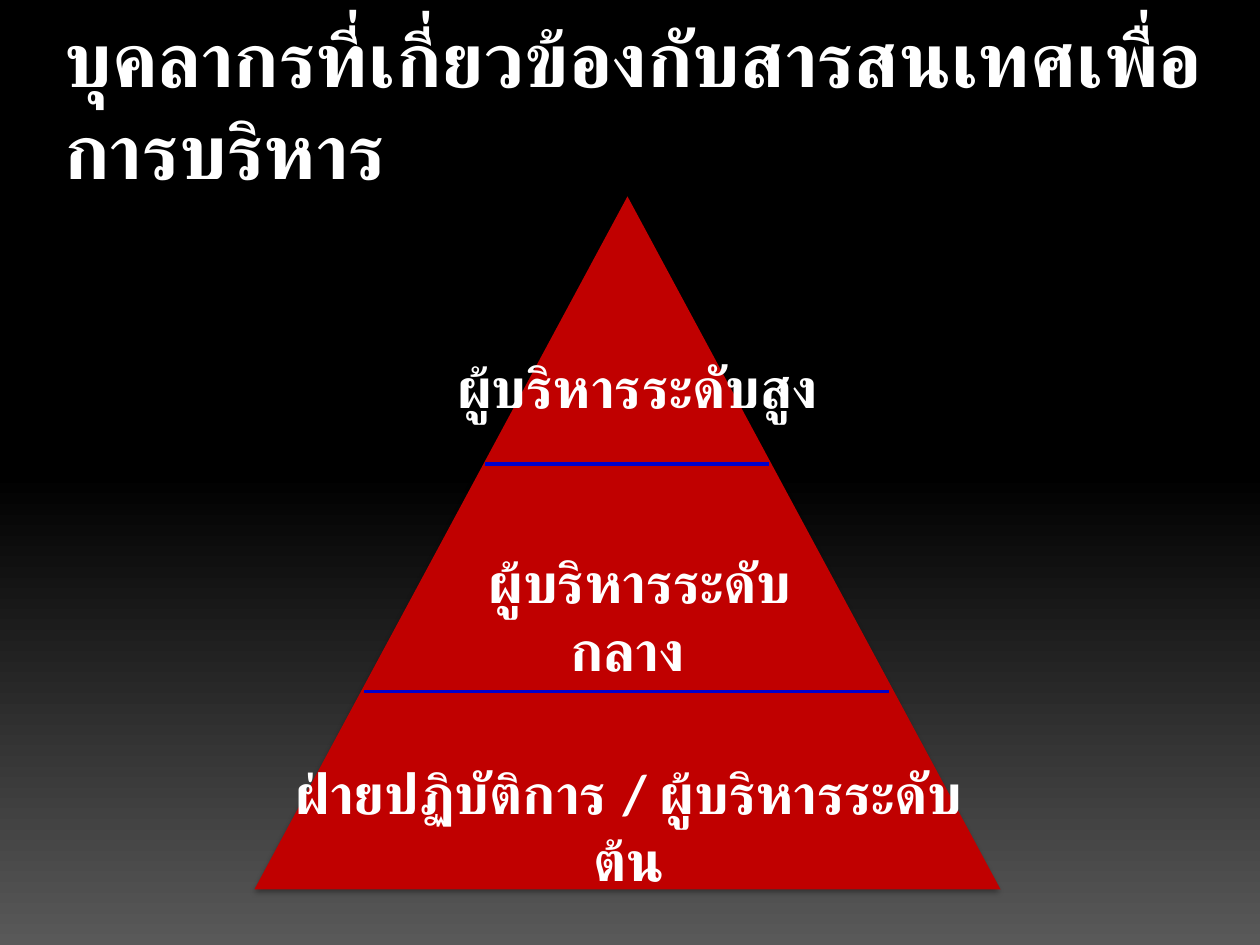
from dataclasses import dataclass

from lxml import etree
from pptx import Presentation
from pptx.dml.color import RGBColor
from pptx.enum.shapes import MSO_CONNECTOR, MSO_SHAPE
from pptx.enum.text import MSO_ANCHOR, MSO_AUTO_SIZE, PP_ALIGN
from pptx.oxml import parse_xml
from pptx.oxml.ns import nsdecls, qn
from pptx.util import Cm, Pt

TRIANGLE = MSO_SHAPE.ISOSCELES_TRIANGLE
STRAIGHT = MSO_CONNECTOR.STRAIGHT
LEFT, CENTER = PP_ALIGN.LEFT, PP_ALIGN.CENTER
MIDDLE = MSO_ANCHOR.MIDDLE
FIXED, GROW = MSO_AUTO_SIZE.NONE, MSO_AUTO_SIZE.SHAPE_TO_FIT_TEXT

SHADOW = f"""<a:effectLst {nsdecls('a')}>
  <a:outerShdw blurRad="39370" dist="22860" dir="5400000" rotWithShape="0">
    <a:srgbClr val="000000"><a:alpha val="35000"/></a:srgbClr>
  </a:outerShdw>
</a:effectLst>"""


@dataclass(frozen=True)
class Theme:
    font: str = "Calibri"
    title: int = 44
    label: int = 32
    rule: float = 2.25
    text: RGBColor = RGBColor(255, 255, 255)
    dark: RGBColor = RGBColor(0, 0, 0)
    grey: RGBColor = RGBColor(0x59, 0x59, 0x59)
    red: RGBColor = RGBColor(0xC0, 0, 0)
    blue: RGBColor = RGBColor(0, 0, 0xCC)


class Page:
    """Holds the theme and the current slide; lengths are in cm."""

    def __init__(self, slide, theme):
        self.slide = slide
        self.theme = theme

    def backdrop(self):
        fill = self.slide.background.fill
        fill.gradient()
        fill.gradient_angle = 270
        stops = ((0.5, self.theme.dark), (1, self.theme.grey))
        for stop, (place, color) in zip(fill.gradient_stops, stops):
            stop.position = place
            stop.color.rgb = color

    def set_text(self, shape, text, size, align, fit):
        frame = shape.text_frame
        frame.word_wrap = True
        frame.auto_size = fit
        para = frame.paragraphs[0]
        para.text = text
        para.alignment = align
        font = para.font
        font.name, font.size, font.bold = self.theme.font, Pt(size), True
        font.color.rgb = self.theme.text
        return para

    def title(self, text, x, y, w, h):
        shape = self.slide.shapes.title
        shape.left, shape.top, shape.width, shape.height = map(Cm, (x, y, w, h))
        self.set_text(shape, text, self.theme.title, LEFT, FIXED)
        shape.text_frame.vertical_anchor = MIDDLE

    def pyramid(self, x, y, w, h):
        shape = self.slide.shapes.add_shape(TRIANGLE, *map(Cm, (x, y, w, h)))
        shape.fill.solid()
        shape.fill.fore_color.rgb = self.theme.red
        shape.line.fill.background()
        shape._element.spPr.append(parse_xml(SHADOW))

    def rule(self, left, right, y):
        line = self.slide.shapes.add_connector(
            STRAIGHT, Cm(left), Cm(y), Cm(right), Cm(y))
        line.line.color.rgb = self.theme.blue
        line.line.width = Pt(self.theme.rule)
        etree.SubElement(line._element.spPr, qn("a:effectLst"))

    def label(self, text, x, y, w, h, indent=0):
        box = self.slide.shapes.add_textbox(*map(Cm, (x, y, w, h)))
        para = self.set_text(box, text, self.theme.label, CENTER, GROW)
        if indent:
            para._p.get_or_add_pPr().set("indent", str(Cm(indent)))


def main():
    deck = Presentation()
    deck.slide_width, deck.slide_height = Cm(25.4), Cm(19.05)
    page = Page(deck.slides.add_slide(deck.slide_layouts[5]), Theme())
    page.backdrop()
    page.title("บุคลากรที่เกี่ยวข้องกับสารสนเทศเพื่อการบริหาร",
               1.04, 0.48, 23.55, 3.18)

    # Pyramid, cut into three levels
    page.pyramid(5.13, 3.96, 15.04, 13.97)
    page.rule(9.78, 15.5, 9.35)
    page.rule(7.34, 17.93, 13.94)

    # Level names, from top to bottom
    page.label("ผู้บริหารระดับสูง", 8.05, 6.98, 9.1, 1.6, indent=0.5)
    page.label("ผู้บริหารระดับกลาง", 8.1, 10.92, 9.1, 1.6, indent=0.5)
    page.label("ฝ่ายปฏิบัติการ / ผู้บริหารระดับต้น", 5.33, 15.16, 14.7, 1.6)

    deck.save("out.pptx")


if __name__ == "__main__":
    main()
